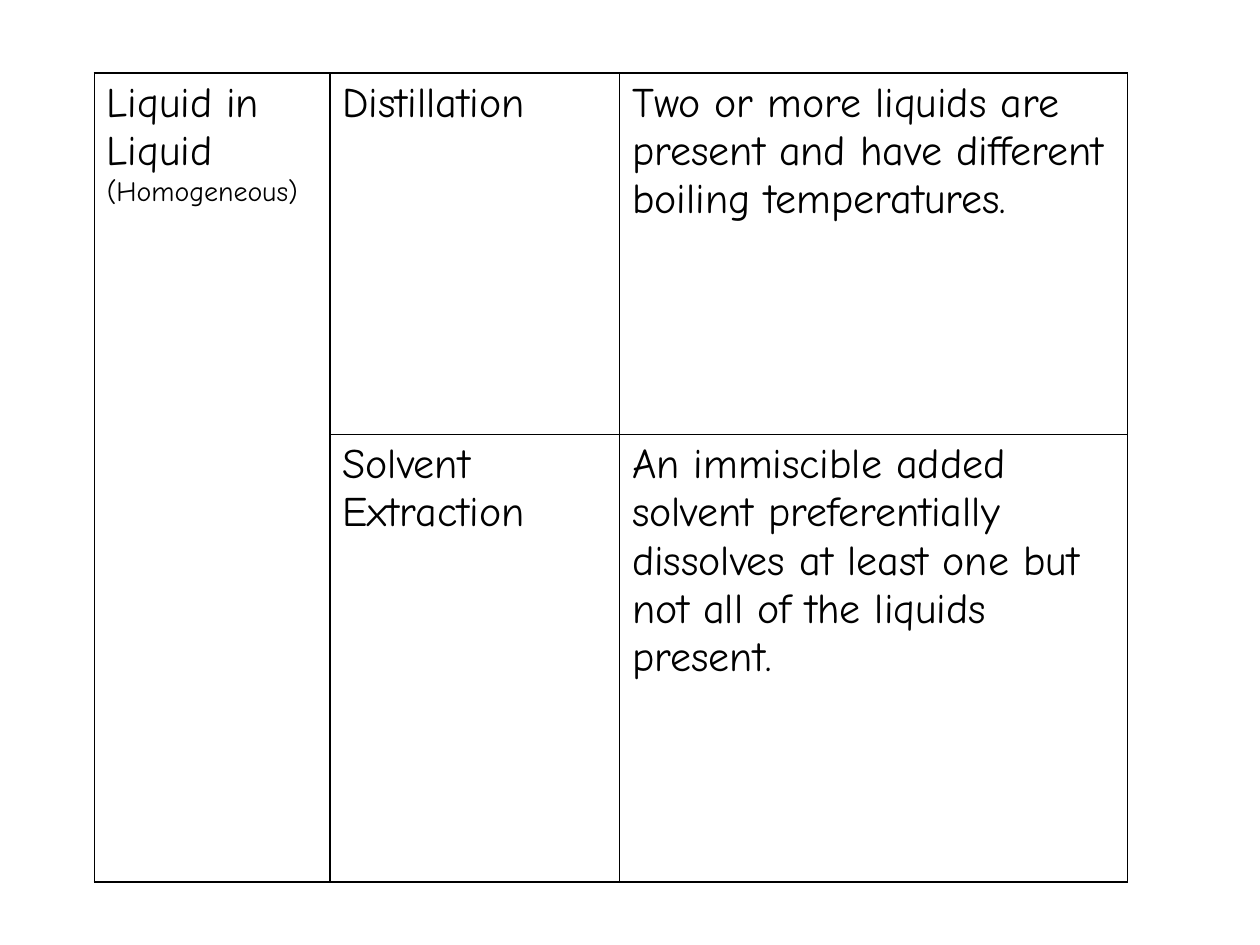
"""Builds a slide with a table of methods for separating liquid mixtures."""
from lxml.etree import SubElement
from pptx import Presentation
from pptx.dml.color import RGBColor as Rgb
from pptx.oxml.ns import qn
from pptx.util import Cm, Pt

COLOURS = {"ink": "000000", "paper": "FFFFFF"}
BODY = {"name": "Comic Neue", "size": Pt(24), "bold": False}
NOTE = {**BODY, "size": Pt(16)}
COLUMN_WIDTHS = [4.75, 5.84, 10.24]
ROW_HEIGHTS = [7.29, 9.02]
ROWS = [
    [
        [("Liquid in Liquid", BODY), ("(Homogeneous)", NOTE)],
        [("Distillation", BODY)],
        [("Two or more liquids are present and have different boiling temperatures.", BODY)],
    ],
    [
        [],
        [("Solvent Extraction", BODY)],
        [("An immiscible added solvent preferentially dissolves at least one "
          "but not all of the liquids present.", BODY)],
    ],
]


def add_borders(cell):
    """Draw a thin line on all four sides of a cell."""
    properties = cell._tc.get_or_add_tcPr()
    for position, side in enumerate(("a:lnL", "a:lnR", "a:lnT", "a:lnB")):
        line = properties.makeelement(qn(side), {"w": str(Pt(1))})
        properties.insert(position, line)
        fill = SubElement(line, qn("a:solidFill"))
        SubElement(fill, qn("a:srgbClr"), val=COLOURS["ink"])


def write_cell(cell, paragraphs):
    """Fill a cell with formatted paragraphs."""
    frame = cell.text_frame
    for index, (text, style) in enumerate(paragraphs):
        para = frame.add_paragraph() if index else frame.paragraphs[0]
        span = para.add_run()
        span.text = text
        for name, value in style.items():
            setattr(span.font, name, value)
        span.font.color.rgb = Rgb.from_string(COLOURS["ink"])


def add_method_table(page):
    """Add the table, with the mixture type spanning both methods."""
    frame = page.shapes.add_table(
        len(ROW_HEIGHTS), len(COLUMN_WIDTHS), Cm(1.9), Cm(1.47),
        Cm(sum(COLUMN_WIDTHS)), Cm(sum(ROW_HEIGHTS)))
    table = frame.table
    table.first_row = table.horz_banding = False
    for column, width in zip(table.columns, COLUMN_WIDTHS):
        column.width = Cm(width)
    for row, height, contents in zip(table.rows, ROW_HEIGHTS, ROWS):
        row.height = Cm(height)
        for cell, paragraphs in zip(row.cells, contents):
            cell.fill.solid()
            cell.fill.fore_color.rgb = Rgb.from_string(COLOURS["paper"])
            add_borders(cell)
            write_cell(cell, paragraphs)
    table.cell(0, 0).merge(table.cell(1, 0))


def main():
    """Create the deck and save it."""
    deck = Presentation()
    deck.slide_width, deck.slide_height = Cm(25.4), Cm(19.05)
    page = deck.slides.add_slide(deck.slide_layouts[6])
    add_method_table(page)
    deck.save("out.pptx")


if __name__ == "__main__":
    main()
